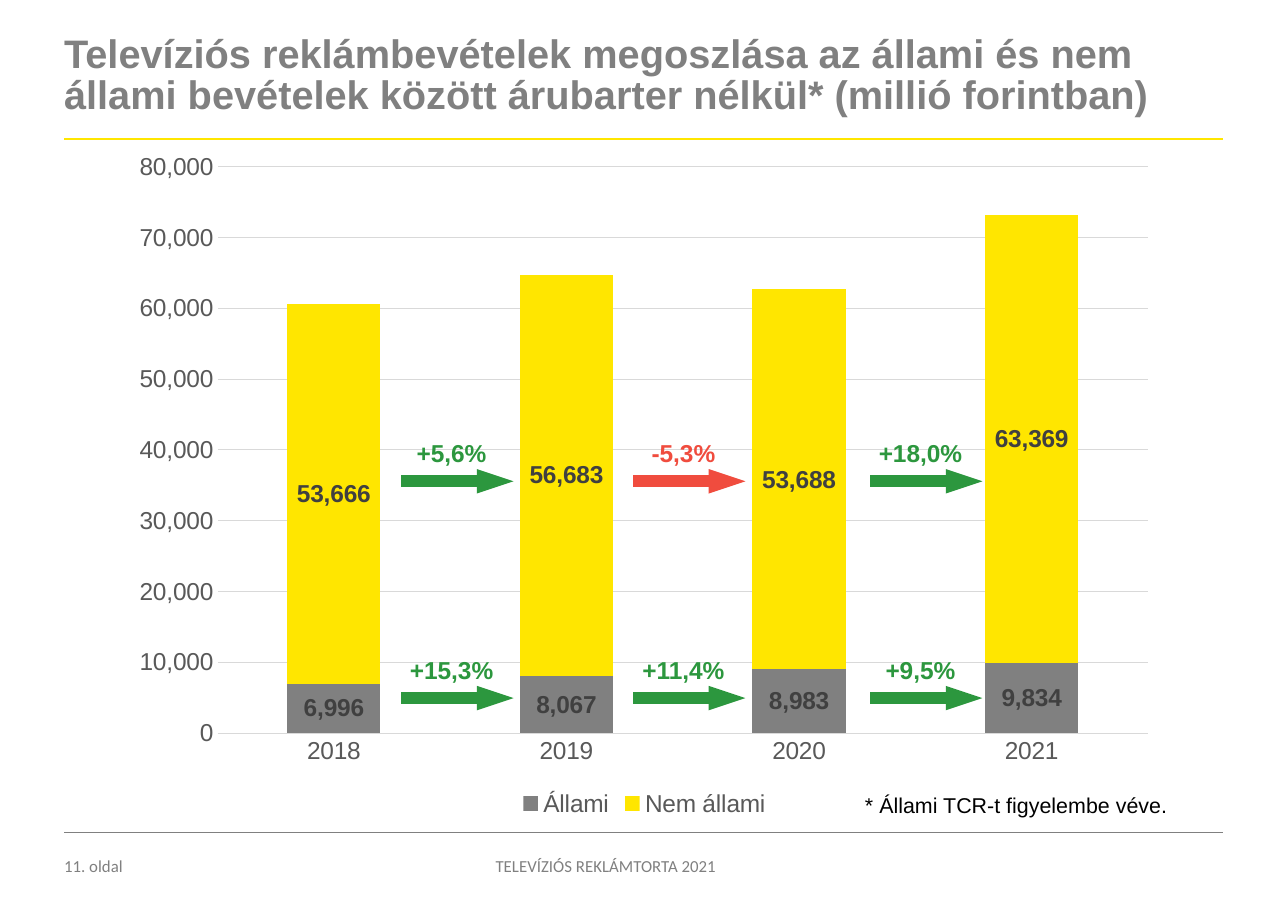
from lxml import etree
from pptx import Presentation
from pptx.chart.data import CategoryChartData
from pptx.dml.color import RGBColor
from pptx.enum.chart import XL_CHART_TYPE, XL_LABEL_POSITION, XL_LEGEND_POSITION, XL_TICK_MARK
from pptx.enum.shapes import MSO_CONNECTOR
from pptx.enum.text import PP_ALIGN
from pptx.oxml.ns import qn
from pptx.util import Cm, Pt

STACKED = XL_CHART_TYPE.COLUMN_STACKED
CENTER_LABEL = XL_LABEL_POSITION.CENTER
BOTTOM = XL_LEGEND_POSITION.BOTTOM
NO_TICK = XL_TICK_MARK.NONE
STRAIGHT = MSO_CONNECTOR.STRAIGHT
LEFT, CENTER = PP_ALIGN.LEFT, PP_ALIGN.CENTER

COLORS = {
    "gray": "808080", "yellow": "FFE600", "green": "2C973E", "red": "F04C3E",
    "black": "000000", "axis": "595959", "grid": "D9D9D9", "label": "404040",
}
YEARS = ["2018", "2019", "2020", "2021"]
REVENUES = [
    ("Állami", [6996, 8067, 8983, 9834], "gray"),
    ("Nem állami", [53666, 56683, 53688, 63369], "yellow"),
]
ARROW_LEFTS = [9.4, 14.75, 20.22]
ARROW_LENGTH = 2.45
CHANGES = [
    (11.1, ["+5,6%", "-5,3%", "+18,0%"]),
    (16.1, ["+15,3%", "+11,4%", "+9,5%"]),
]
PLOT_LAYOUT = {"x": 0.094, "y": 0.038, "w": 0.885, "h": 0.832}


def color(name):
    return RGBColor.from_string(COLORS[name])


def format_font(font, size, color_name, bold=False, name="Arial"):
    font.name = name
    font.size = Pt(size)
    font.bold = bold
    font.color.rgb = color(color_name)


class SlideBuilder:
    """Draws styled elements on one slide."""

    def __init__(self, slide):
        self.slide = slide

    def text(self, text, left, top, width, height, size=16, color_name="gray", bold=False,
             font="Arial", align=LEFT, spacing=1.0, inset_top=0):
        box = self.slide.shapes.add_textbox(Cm(left), Cm(top), Cm(width), Cm(height))
        frame = box.text_frame
        frame.word_wrap = True
        frame.margin_left = frame.margin_right = frame.margin_bottom = 0
        frame.margin_top = Cm(inset_top)
        paragraph = frame.paragraphs[0]
        paragraph.alignment = align
        paragraph.line_spacing = spacing
        run = paragraph.add_run()
        run.text = text
        format_font(run.font, size, color_name, bold, font)

    def line(self, left, right, y, color_name, width):
        connector = self.slide.shapes.add_connector(STRAIGHT, Cm(left), Cm(y), Cm(right), Cm(y))
        connector.line.color.rgb = color(color_name)
        connector.line.width = Pt(width)
        etree.SubElement(connector._element.spPr, qn("a:effectLst"))
        return connector

    def arrow(self, left, y, color_name):
        connector = self.line(left, left + ARROW_LENGTH, y, color_name, 8)
        outline = connector.line._get_or_add_ln()
        outline.set("cap", "sq")
        etree.SubElement(outline, qn("a:tailEnd"), type="triangle", w="sm", len="med")

    def change(self, text, left, y):
        color_name = "red" if text.startswith("-") else "green"
        self.arrow(left, y, color_name)
        self.text(text, left - 0.48, y - 1.13, 3, 1.2, color_name=color_name, bold=True,
                  align=CENTER, inset_top=0.13)

    def chart(self, left, top, width, height):
        data = CategoryChartData(number_format="#,##0")
        data.categories = YEARS
        for name, values, _ in REVENUES:
            data.add_series(name, values)
        chart = self.slide.shapes.add_chart(
            STACKED, Cm(left), Cm(top), Cm(width), Cm(height), data).chart
        format_font(chart.font, 16, "axis")
        chart.has_title = False
        chart.has_legend = True
        chart.legend.position = BOTTOM
        chart.legend.include_in_layout = False
        format_font(chart.legend.font, 16, "axis")
        self.chart_axes(chart)
        self.chart_series(chart.plots[0])
        self.chart_layout(chart)

    def chart_axes(self, chart):
        for axis in (chart.category_axis, chart.value_axis):
            axis.major_tick_mark = axis.minor_tick_mark = NO_TICK
            format_font(axis.tick_labels.font, 16, "axis")
        values = chart.value_axis
        values.minimum_scale, values.maximum_scale, values.major_unit = 0, 80000, 10000
        values.tick_labels.number_format = "#,##0"
        values.tick_labels.number_format_is_linked = False
        values.format.line.fill.background()
        for line in (chart.category_axis.format.line, values.major_gridlines.format.line):
            line.color.rgb = color("grid")
            line.width = Pt(0.75)

    def chart_series(self, plot):
        plot.gap_width = 150
        plot.overlap = 100
        plot.vary_by_categories = False
        for series, (_, _, color_name) in zip(plot.series, REVENUES):
            series.format.fill.solid()
            series.format.fill.fore_color.rgb = color(color_name)
            labels = series.data_labels
            labels.show_value = True
            labels.position = CENTER_LABEL
            format_font(labels.font, 16, "label", bold=True)

    def chart_layout(self, chart):
        plot_area = chart._chartSpace.chart.plotArea
        for layout in plot_area.findall(qn("c:layout")):
            plot_area.remove(layout)
        layout = etree.Element(qn("c:layout"))
        manual = etree.SubElement(layout, qn("c:manualLayout"))
        etree.SubElement(manual, qn("c:layoutTarget"), val="inner")
        for side in ("x", "y"):
            etree.SubElement(manual, qn(f"c:{side}Mode"), val="edge")
        for side, share in PLOT_LAYOUT.items():
            etree.SubElement(manual, qn(f"c:{side}"), val=str(share))
        plot_area.insert(0, layout)


def main():
    presentation = Presentation()
    presentation.slide_width = Cm(29.72)
    presentation.slide_height = Cm(21.08)
    builder = SlideBuilder(presentation.slides.add_slide(presentation.slide_layouts[6]))

    builder.text("11. oldal", 1.48, 19.74, 2.16, 0.6, size=11, font="Calibri")
    builder.line(1.48, 28.22, 3.2, "yellow", 1.5)
    builder.line(1.48, 28.22, 19.2, "gray", 0.25)
    builder.text("Televíziós reklámbevételek megoszlása az állami és nem állami bevételek "
                 "között árubarter nélkül* (millió forintban)",
                 1.48, 0.84, 27.08, 2.38, size=26, bold=True, spacing=0.85)
    builder.text("TELEVÍZIÓS REKLÁMTORTA 2021", 8.4, 19.74, 11.16, 0.6, size=11,
                 font="Calibri", align=CENTER)
    builder.text("* Állami TCR-t figyelembe véve.", 19.96, 18.26, 7.8, 0.6, size=14,
                 color_name="black", spacing=0.85, inset_top=0.1)
    builder.chart(2.74, 3.25, 24.26, 15.7)
    for y, texts in CHANGES:
        for left, text in zip(ARROW_LEFTS, texts):
            builder.change(text, left, y)
    presentation.save("out.pptx")


if __name__ == "__main__":
    main()
